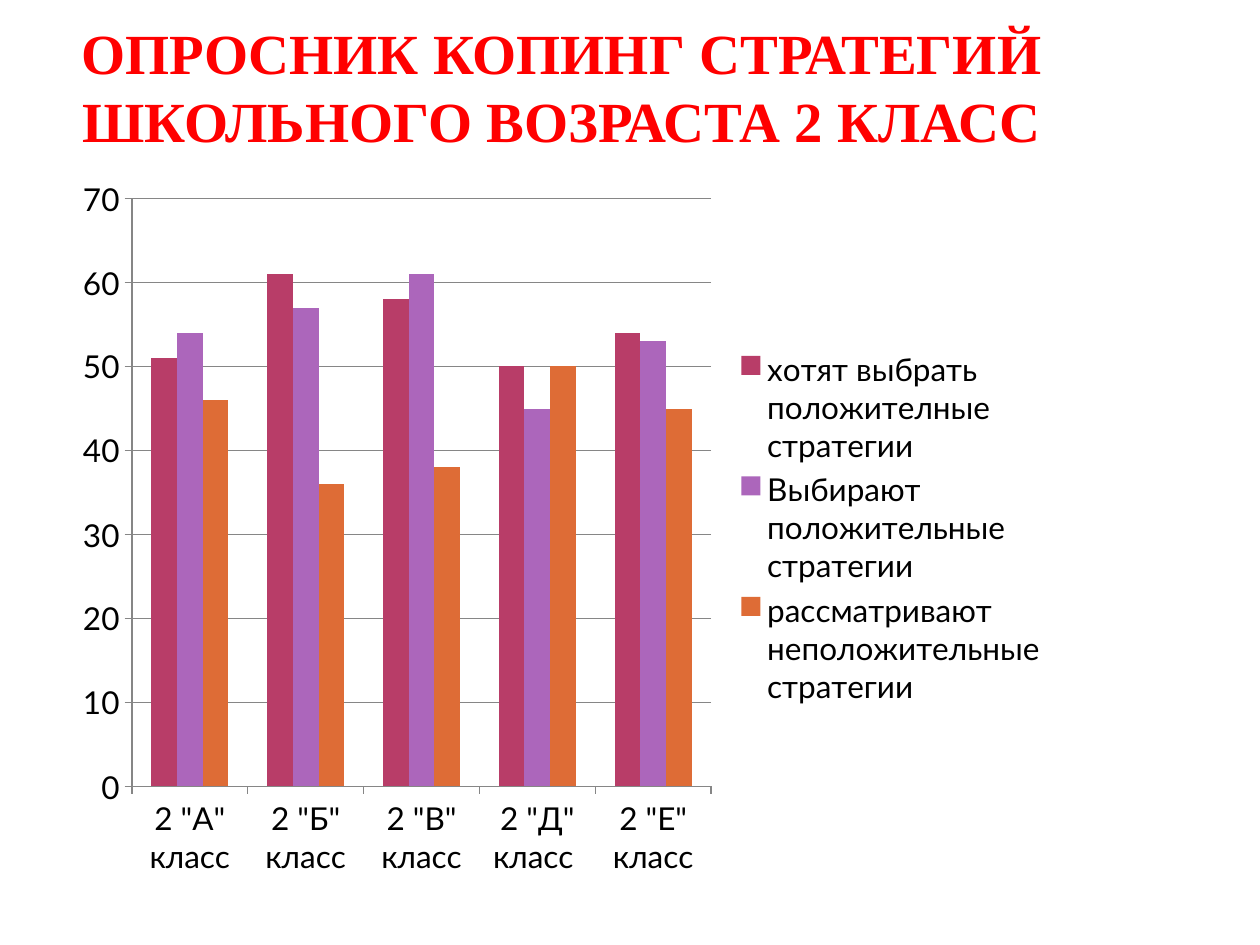
from pptx import Presentation
from pptx import util as u
from pptx.chart.data import CategoryChartData
from pptx.dml.color import RGBColor
from pptx.enum import chart as charts, text

RED = RGBColor(0xFF, 0x00, 0x00)
BLACK = RGBColor(0x00, 0x00, 0x00)
GRAY = RGBColor(0x86, 0x86, 0x86)
CRIMSON = RGBColor(0xB8, 0x3D, 0x68)
PURPLE = RGBColor(0xAC, 0x66, 0xBB)
ORANGE = RGBColor(0xDE, 0x6C, 0x36)

CLASSES = [f'2 "{letter}" класс' for letter in "АБВ"] + ['2 "Д" класс ', '2 "Е" класс']
STRATEGIES = [
    ("хотят выбрать положителные стратегии", (51, 61, 58, 50, 54), CRIMSON),
    ("Выбирают положительные стратегии", (54, 57, 61, 45, 53), PURPLE),
    ("рассматривают неположительные стратегии", (46, 36, 38, 50, 45), ORANGE),
]


class SlideBuilder:
    """Holds the style and the current slide."""

    title_font = "Times New Roman"
    chart_font = "Lato"
    left, width = u.Pt(36), u.Pt(570)

    def __init__(self, slide):
        self.slide = slide

    def title(self, wording, top, height, size):
        shape = self.slide.shapes.add_textbox(self.left, u.Pt(top), self.width, u.Pt(height))
        frame = shape.text_frame
        frame.word_wrap = True
        frame.vertical_anchor = text.MSO_ANCHOR.BOTTOM
        frame.margin_left = frame.margin_right = u.Pt(3.6)
        frame.margin_top = frame.margin_bottom = 0
        frame.text = wording
        paragraph = frame.paragraphs[0]
        paragraph.alignment = text.PP_ALIGN.CENTER
        font = paragraph.runs[0].font
        font.name, font.size, font.bold = self.title_font, u.Pt(size), True
        font.color.rgb = RED

    def column_chart(self, categories, series_rows, top, height, size):
        data = CategoryChartData()
        data.categories = categories
        for name, values, _ in series_rows:
            data.add_series(name, values)
        chart = self.slide.shapes.add_chart(
            charts.XL_CHART_TYPE.COLUMN_CLUSTERED,
            self.left, u.Pt(top), self.width, u.Pt(height), data).chart
        chart.has_title = False
        chart.font.name, chart.font.size = self.chart_font, u.Pt(size)
        chart.font.color.rgb = BLACK

        # Columns
        plot = chart.plots[0]
        plot.vary_by_categories = False
        plot.gap_width, plot.overlap = 150, 0
        for series, (_, _, color) in zip(plot.series, series_rows):
            series.format.fill.solid()
            series.format.fill.fore_color.rgb = color

        # Axes and gridlines
        value_axis = chart.value_axis
        value_axis.minimum_scale, value_axis.maximum_scale = 0, 70
        value_axis.major_unit = 10
        value_axis.has_major_gridlines = True
        for axis in (chart.category_axis, value_axis):
            axis.major_tick_mark = charts.XL_TICK_MARK.OUTSIDE
        for part in (chart.category_axis, value_axis, value_axis.major_gridlines):
            part.format.line.color.rgb = GRAY
            part.format.line.width = u.Pt(0.75)

        # Legend
        chart.has_legend = True
        chart.legend.position = charts.XL_LEGEND_POSITION.RIGHT
        chart.legend.include_in_layout = False


def main():
    presentation = Presentation()
    presentation.slide_width, presentation.slide_height = u.Pt(720), u.Pt(540)
    slide = presentation.slides.add_slide(presentation.slide_layouts[6])
    builder = SlideBuilder(slide)
    builder.title("ОПРОСНИК КОПИНГ СТРАТЕГИЙ ШКОЛЬНОГО ВОЗРАСТА 2 КЛАСС",
                  top=3, height=85, size=32.4)
    builder.column_chart(CLASSES, STRATEGIES, top=94.32, height=414, size=18)
    presentation.save("out.pptx")


if __name__ == "__main__":
    main()
